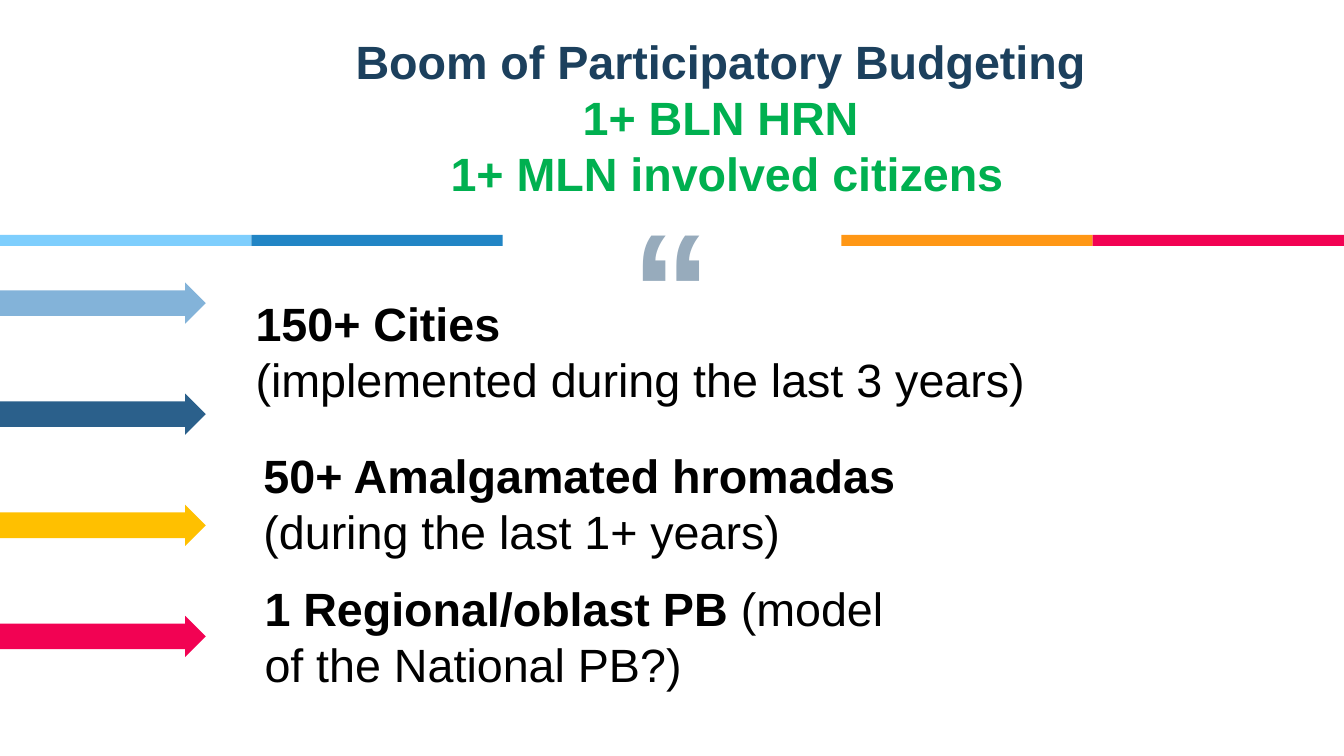
from pptx import Presentation
from pptx.dml.color import RGBColor
from pptx.enum.shapes import MSO_SHAPE
from pptx.enum.text import PP_ALIGN
from pptx.util import Cm, Pt

RECTANGLE = MSO_SHAPE.RECTANGLE
RIGHT_ARROW = MSO_SHAPE.RIGHT_ARROW
LEFT, CENTER = PP_ALIGN.LEFT, PP_ALIGN.CENTER

SLIDE_WIDTH, SLIDE_HEIGHT = 25.4, 14.29
BLACK, NAVY, GREEN, GREY = "000000", "1C405D", "00B050", "97ABBC"
BODY_SIZE, QUOTE_SIZE = 25, 86


def color(hex_value):
    return RGBColor.from_string(hex_value)


def add_block(slide, kind, left, top, width, height, fill):
    """Add a plain filled shape without outline or shadow."""
    shape = slide.shapes.add_shape(kind, Cm(left), Cm(top), Cm(width), Cm(height))
    shape.shadow.inherit = False
    shape.fill.solid()
    shape.fill.fore_color.rgb = color(fill)
    shape.line.fill.background()
    return shape


def add_text(slide, box, paragraphs, size=BODY_SIZE, align=LEFT, inset=0.1):
    """Add a text box; each paragraph is a list of (text, bold, colour) runs."""
    shape = slide.shapes.add_textbox(*(Cm(length) for length in box))
    frame = shape.text_frame
    frame_format = {"word_wrap": True}
    for side in ("left", "top", "right", "bottom"):
        frame_format[f"margin_{side}"] = Cm(inset)
    for name, value in frame_format.items():
        setattr(frame, name, value)

    for index, runs in enumerate(paragraphs):
        paragraph = frame.add_paragraph() if index else frame.paragraphs[0]
        paragraph.alignment = align
        for text, bold, hex_value in runs:
            run = paragraph.add_run()
            run.text = text
            font_format = {"name": "Arial", "size": Pt(size), "bold": bold}
            for name, value in font_format.items():
                setattr(run.font, name, value)
            run.font.color.rgb = color(hex_value)


def add_divider(slide):
    """Add two pairs of bars, one at each slide edge."""
    width = 4.75
    bars = [
        (0, "7ECEFD"),
        (width, "2185C5"),
        (SLIDE_WIDTH - 2 * width, "FF9715"),
        (SLIDE_WIDTH - width, "F20253"),
    ]
    for left, fill in bars:
        add_block(slide, RECTANGLE, left, 4.44, width, 0.21, fill)


def add_arrows(slide):
    """Add evenly spaced arrows that start at the left edge."""
    first_top, step = 5.34, 2.1
    for index, fill in enumerate(("83B3D9", "2B608B", "FFC000", "F20253")):
        arrow = add_block(slide, RIGHT_ARROW, 0, first_top + index * step, 3.89, 0.78, fill)
        arrow.adjustments[0] = 0.62
        arrow.adjustments[1] = 0.5


def main():
    presentation = Presentation()
    presentation.slide_width = Cm(SLIDE_WIDTH)
    presentation.slide_height = Cm(SLIDE_HEIGHT)
    slide = presentation.slides.add_slide(presentation.slide_layouts[6])

    # Quotation mark and divider
    add_text(slide, (9.98, 3.28, 5.44, 3.84), [[("“", True, GREY)]],
             size=QUOTE_SIZE, align=CENTER, inset=0.24)
    add_divider(slide)

    # Title
    title = [
        [("Boom of Participatory Budgeting ", True, NAVY)],
        [("1+ BLN HRN ", True, GREEN)],
        [("1+ MLN involved citizens", True, GREEN)],
    ]
    add_text(slide, (2.74, 0.39, 22, 3.5), title, align=CENTER, inset=0.24)

    # Facts with their arrows
    add_arrows(slide)
    facts = [
        ((4.73, 5.48, 19.84, 2.24),
         [[("150+ Cities", True, BLACK)],
          [("(implemented during the last 3 years)", False, BLACK)]]),
        ((4.88, 8.34, 20.5, 2.24),
         [[("50+ Amalgamated hromadas", True, BLACK)],
          [("(during the last 1+ years)", False, BLACK)]]),
        ((4.9, 10.87, 12.4, 2.24),
         [[("1 Regional/oblast PB", True, BLACK),
           (" (model of the National PB?)", False, BLACK)]]),
    ]
    for box, paragraphs in facts:
        add_text(slide, box, paragraphs)

    presentation.save("out.pptx")


if __name__ == "__main__":
    main()
